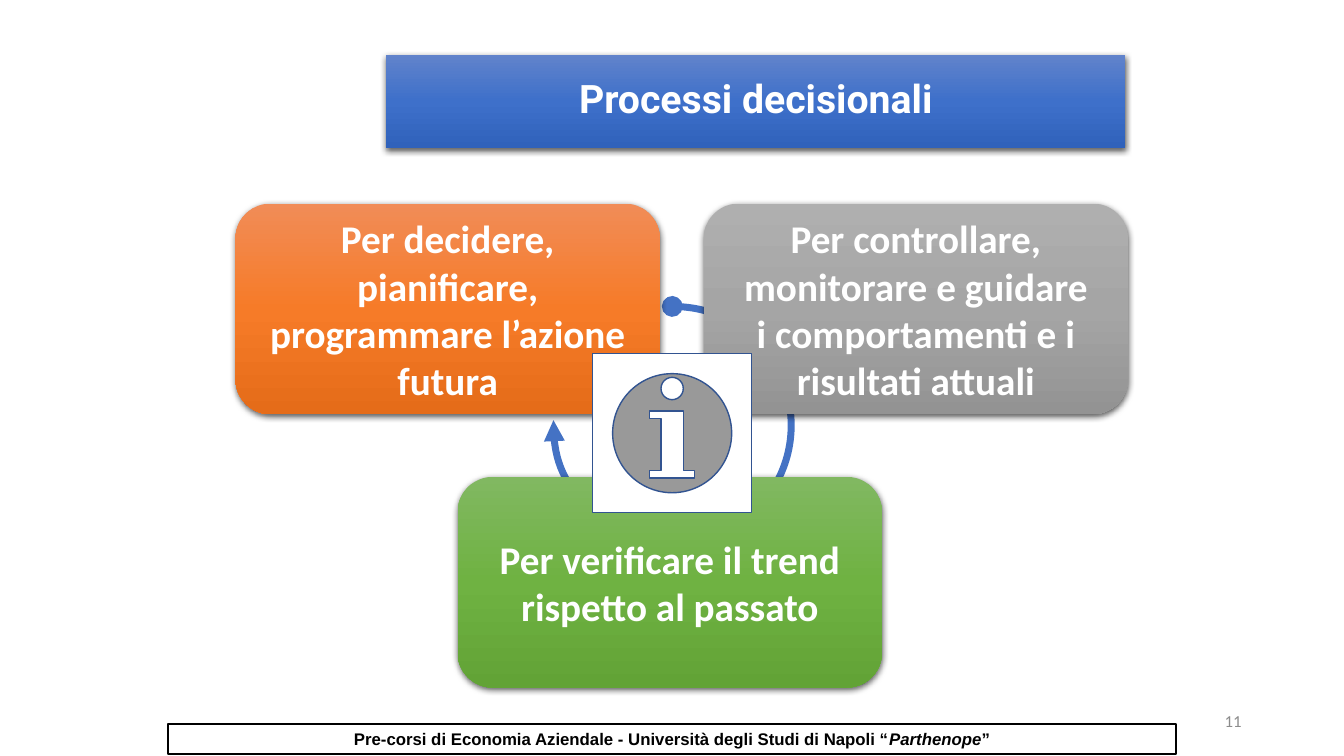
from copy import deepcopy

from lxml.etree import SubElement
from pptx import Presentation
from pptx.dml.color import RGBColor
from pptx.enum.shapes import MSO_SHAPE as SHAPE
from pptx.enum.text import MSO_ANCHOR as ANCHOR, MSO_AUTO_SIZE as AUTO, PP_ALIGN as ALIGN
from pptx.oxml.ns import qn
from pptx.util import Pt

WHITE = RGBColor(0xFF, 0xFF, 0xFF)
BLACK = RGBColor(0x00, 0x00, 0x00)
GREY_TEXT = RGBColor(0x8C, 0x8C, 0x8C)
ARC_BLUE = RGBColor(0x44, 0x72, 0xC4)
ICON_BLUE = RGBColor(0x32, 0x54, 0x91)
BLUES = RGBColor(0x61, 0x83, 0xCB), RGBColor(0x3E, 0x70, 0xCA), RGBColor(0x30, 0x62, 0xBB)
ORANGES = RGBColor(0xF1, 0x8C, 0x57), RGBColor(0xF6, 0x7B, 0x28), RGBColor(0xE5, 0x6C, 0x19)
GREYS = RGBColor(0xAF, 0xAF, 0xAF), RGBColor(0xA5, 0xA5, 0xA5), RGBColor(0x93, 0x93, 0x93)
GREENS = RGBColor(0x81, 0xB8, 0x61), RGBColor(0x6F, 0xB2, 0x42), RGBColor(0x62, 0xA3, 0x36)

BOX_W, BOX_H = 303.1, 150.5


class Deck:
    heading = {"name": "Roboto", "size": Pt(28), "bold": True}
    box_font = {"name": "Calibri", "size": Pt(28), "bold": True}
    number_font = {"name": "Calibri", "size": Pt(12), "bold": False}
    footer_font = {"name": "Arial", "size": Pt(12), "bold": True}

    def __init__(self, prs):
        self.slide = prs.slides.add_slide(prs.slide_layouts[5])

    def shape(self, kind, x, y, w, h):
        sp = self.slide.shapes.add_shape(kind, Pt(x), Pt(y), Pt(w), Pt(h))
        sp.shadow.inherit = False
        sp.fill.background()
        return sp

    def outline(self, sp, color, width):
        sp.line.color.rgb = color
        sp.line.width = Pt(width)

    def glossy(self, sp, colors):
        sp.fill.gradient()
        sp.fill.gradient_angle = 270
        stop_list = sp._element.spPr.find(qn("a:gradFill")).find(qn("a:gsLst"))
        stop_list.append(deepcopy(stop_list[-1]))
        for i, (stop, color) in enumerate(zip(sp.fill.gradient_stops, colors)):
            stop.position = i / 2
            stop.color.rgb = color
        sp.line.fill.background()
        sp.shadow.inherit = False
        effects = sp._element.spPr.find(qn("a:effectLst"))
        shadow = SubElement(effects, qn("a:outerShdw"), blurRad=str(Pt(4.5)),
                            dist=str(Pt(1.5)), dir="5400000", rotWithShape="0")
        black = SubElement(shadow, qn("a:srgbClr"), val="000000")
        SubElement(black, qn("a:alpha"), val="63000")

    def text(self, sp, paragraphs, font, color, align=ALIGN.CENTER, anchor=ANCHOR.MIDDLE):
        tf = sp.text_frame
        frame = {"word_wrap": True, "auto_size": AUTO.NONE, "vertical_anchor": anchor}
        for key, value in frame.items():
            setattr(tf, key, value)
        for i, runs in enumerate(paragraphs):
            p = tf.add_paragraph() if i else tf.paragraphs[0]
            p.alignment = align
            for words, italic in runs:
                r = p.add_run()
                r.text = words
                for key, value in {**font, "italic": italic}.items():
                    setattr(r.font, key, value)
                r.font.color.rgb = color

    def title(self, words, x, y, w, h, colors):
        sp = self.slide.shapes.title
        place = {"left": x, "top": y, "width": w, "height": h}
        for key, value in place.items():
            setattr(sp, key, Pt(value))
        self.glossy(sp, colors)
        self.text(sp, [[(words, False)]], self.heading, WHITE)
        sp.text_frame.paragraphs[0].line_spacing = 0.9

    def box(self, lines, x, y, colors):
        sp = self.shape(SHAPE.ROUNDED_RECTANGLE, x, y, BOX_W, BOX_H)
        self.glossy(sp, colors)
        self.text(sp, [[(line, False)] for line in lines], self.box_font, WHITE)

    def cycle_arc(self, x, y, size, start, end):
        sp = self.shape(SHAPE.ARC, x, y, size, size)
        sp.adjustments[0] = start
        sp.adjustments[1] = end
        self.outline(sp, ARC_BLUE, 5)
        ln = sp._element.spPr.find(qn("a:ln"))
        SubElement(ln, qn("a:headEnd"), type="oval")
        SubElement(ln, qn("a:tailEnd"), type="triangle")

    def info_icon(self, x, y, size):
        sp = self.shape(SHAPE.ACTION_BUTTON_INFORMATION, x, y, size, size)
        sp.fill.solid()
        sp.fill.fore_color.rgb = WHITE
        self.outline(sp, ICON_BLUE, 1)

    def number(self, words, x, y, w, h):
        sp = self.slide.shapes.add_textbox(Pt(x), Pt(y), Pt(w), Pt(h))
        self.text(sp, [[(words, False)]], self.number_font, GREY_TEXT, ALIGN.RIGHT)

    def footer(self, runs, x, y, w, h):
        sp = self.shape(SHAPE.RECTANGLE, x, y, w, h)
        self.outline(sp, BLACK, 1.5)
        self.text(sp, [runs], self.footer_font, BLACK, anchor=ANCHOR.TOP)


def main():
    prs = Presentation()
    prs.slide_width, prs.slide_height = Pt(960), Pt(540)
    deck = Deck(prs)
    deck.cycle_arc(395.3, 218.9, 169.9, 162, 109.49)
    deck.title("Processi decisionali", 275.8, 39, 528, 66.5, BLUES)
    deck.box(["Per decidere, pianificare, programmare l’azione", "futura"],
             168.2, 145.4, ORANGES)
    deck.box(["Per controllare, monitorare e guidare", "i comportamenti e i risultati attuali"],
             502.6, 145.4, GREYS)
    deck.number("11", 678, 500.5, 216, 28.8)
    deck.box(["Per verificare il trend rispetto al passato"], 326.9, 340.6, GREENS)
    deck.info_icon(423.4, 252.7, 113.4)
    deck.footer([("Pre-corsi di Economia Aziendale - Università degli Studi di Napoli “", False),
                 ("Parthenope", True), ("”", False)], 120, 517, 720, 21.8)
    prs.save("out.pptx")


if __name__ == "__main__":
    main()
